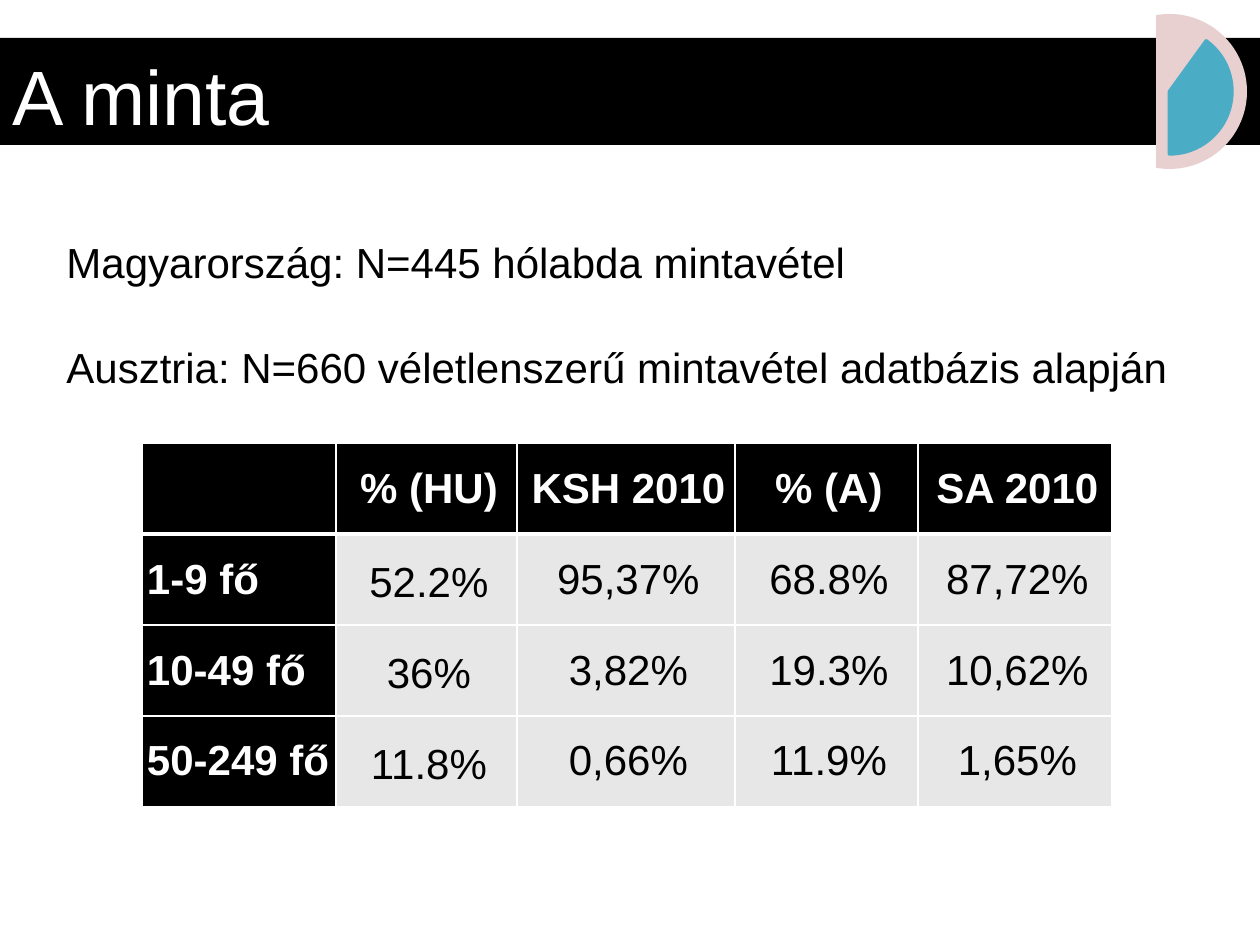
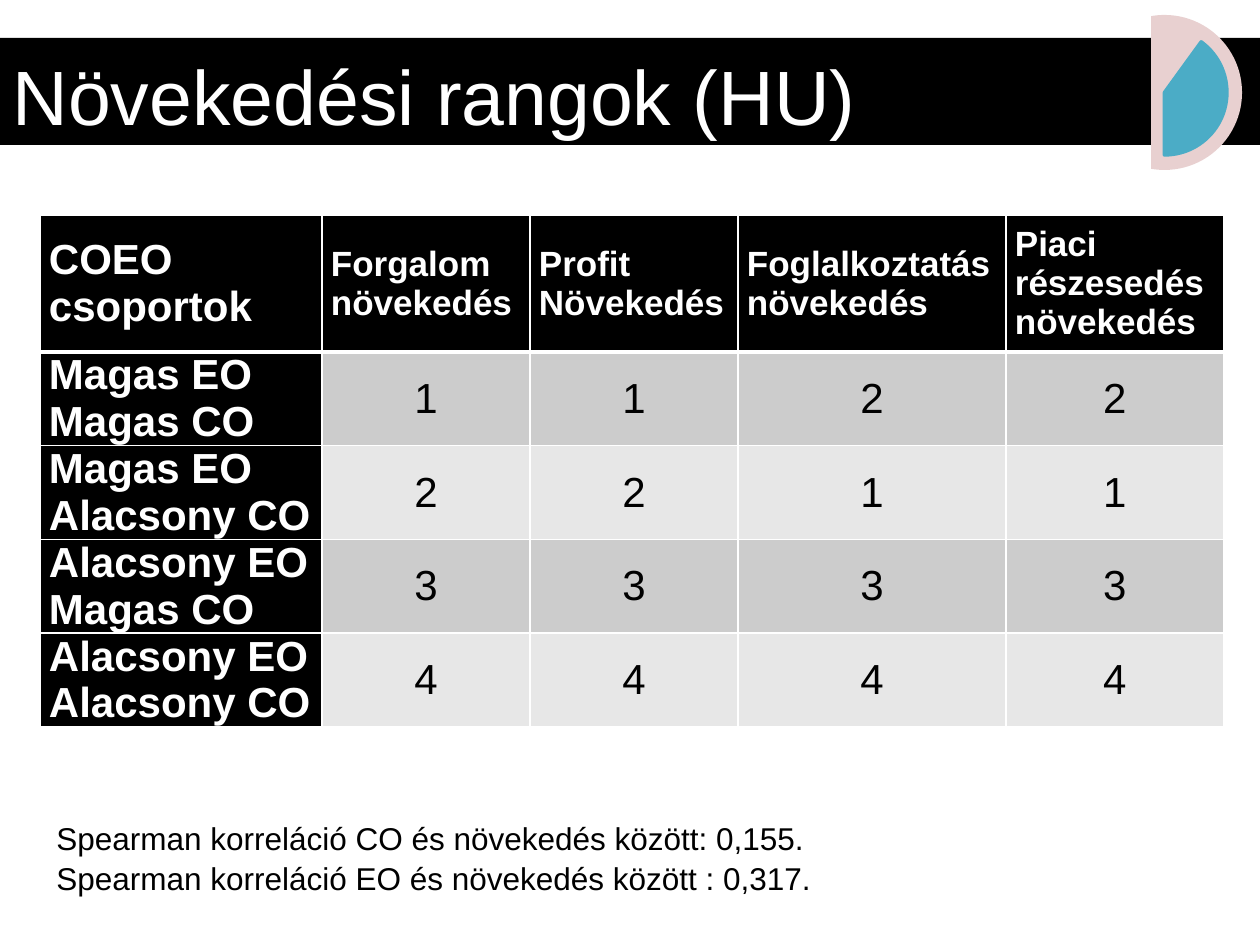
from lxml import etree
from pptx import Presentation
from pptx.dml.color import RGBColor
from pptx.enum.shapes import MSO_SHAPE
from pptx.enum.text import MSO_ANCHOR, PP_ALIGN
from pptx.oxml.ns import qn
from pptx.util import Emu, Pt

CHORD, PIE = MSO_SHAPE.CHORD, MSO_SHAPE.PIE
LEFT, CENTER = PP_ALIGN.LEFT, PP_ALIGN.CENTER
TOP, MIDDLE = MSO_ANCHOR.TOP, MSO_ANCHOR.MIDDLE

FONT = "Arial"
COLORS = {
    "black": "000000",
    "white": "FFFFFF",
    "light_row": "E7E7E7",
    "dark_row": "CCCCCC",
    "pink": "E8D0D0",
    "teal": "4BACC6",
}
SLIDE_WIDTH, SLIDE_HEIGHT = 1260, 945
EMU_PER_PX = 914400 / 126
TITLE_ONLY = 5
BODY_SPACING = 1.075
ANGLE_UNIT = 0.6  # one degree as an adjustment value


def px(length):
    return Emu(round(length * EMU_PER_PX))


def box(left, top, width, height):
    return [px(length) for length in (left, top, width, height)]


def color(name):
    return RGBColor.from_string(COLORS[name])


def fill(target, name):
    target.fill.solid()
    target.fill.fore_color.rgb = color(name)


def add_run(paragraph, text, size, color_name="black", bold=False):
    run = paragraph.add_run()
    run.text = text
    run.font.name = FONT
    run.font.size = Pt(size)
    run.font.bold = bold
    run.font.color.rgb = color(color_name)


def add_title_slide(presentation, title):
    """Add a slide whose title placeholder is the black band."""
    slide = presentation.slides.add_slide(presentation.slide_layouts[TITLE_ONLY])
    band = slide.shapes.title
    band.left, band.top, band.width, band.height = box(0, 38, SLIDE_WIDTH, 107)
    fill(band, "black")
    band.text_frame.vertical_anchor = MIDDLE
    paragraph = band.text_frame.paragraphs[0]
    paragraph.alignment = LEFT
    paragraph.line_spacing = BODY_SPACING
    add_run(paragraph, title, 44, "white")
    return slide


def add_sector(slide, kind, bounds, angles, color_name):
    shape = slide.shapes.add_shape(kind, *box(*bounds))
    shape.shadow.inherit = False
    for index, angle in enumerate(angles):
        shape.adjustments[index] = angle * ANGLE_UNIT
    fill(shape, color_name)
    return shape


def add_emblem(slide, left, top):
    """Draw the pink half disc with the teal sector inside it."""
    disc, inset = 155, 15
    inner = disc - 2 * inset
    half_disc = add_sector(slide, CHORD, (left, top, disc, disc), (260, 100), "pink")
    half_disc.line.fill.background()
    sector = add_sector(slide, PIE, (left + inset, top + inset, inner, inner),
                        (306, 90), "teal")
    sector.line.color.rgb = color("teal")
    sector.line.width = Pt(2)


def add_lines(slide, bounds, lines, size, gap=0):
    frame = slide.shapes.add_textbox(*box(*bounds)).text_frame
    frame.word_wrap = True
    for index, line in enumerate(lines):
        paragraph = frame.add_paragraph() if index else frame.paragraphs[0]
        paragraph.line_spacing = BODY_SPACING
        if index:
            paragraph.space_before = Pt(gap)
        add_run(paragraph, line, size)


def set_borders(cell, bottom_width):
    properties = cell._tc.get_or_add_tcPr()
    widths = {"a:lnL": 1, "a:lnR": 1, "a:lnT": 1, "a:lnB": bottom_width}
    for index, (tag, width) in enumerate(widths.items()):
        line = etree.Element(qn(tag), w=str(Pt(width)))
        solid = etree.SubElement(line, qn("a:solidFill"))
        etree.SubElement(solid, qn("a:srgbClr"), val=COLORS["white"])
        properties.insert(index, line)


def add_cell_text(cell, text, alignment, size, color_name, bold):
    paragraph = cell.text_frame.paragraphs[0]
    paragraph.alignment = alignment
    for index, line in enumerate(text.split("\n")):
        if index:
            paragraph.add_line_break()
        if line:
            add_run(paragraph, line, size, color_name, bold)


def add_table(slide, origin, column_widths, row_heights, rows, row_colors, margins,
              header_alignment=CENTER, header_size=24, label_anchor=MIDDLE):
    """Add a table with a black header row and a black label column."""
    bounds = (*origin, sum(column_widths), sum(row_heights))
    table = slide.shapes.add_table(len(rows), len(column_widths), *box(*bounds)).table
    for column, width in zip(table.columns, column_widths):
        column.width = px(width)
    for row, height in zip(table.rows, row_heights):
        row.height = px(height)
    for row_index, texts in enumerate(rows):
        for column_index, text in enumerate(texts):
            cell = table.cell(row_index, column_index)
            is_header, is_label = row_index == 0, column_index == 0
            is_black = is_header or is_label
            cell.margin_left, cell.margin_right = map(px, margins)
            cell.margin_top = cell.margin_bottom = 0
            cell.vertical_anchor = label_anchor if is_label and not is_header else MIDDLE
            row_color = row_colors[(row_index - 1) % len(row_colors)]
            fill(cell, "black" if is_black else row_color)
            set_borders(cell, 3 if is_header else 1)
            if is_header:
                alignment = header_alignment
            else:
                alignment = LEFT if is_label else CENTER
            size = header_size if is_header and not is_label else 24
            add_cell_text(cell, text, alignment, size,
                          "white" if is_black else "black", is_black)
    return table


def add_sample_slide(presentation):
    slide = add_title_slide(presentation, "A minta")
    rows = [
        ("", "% (HU)", "KSH 2010", "% (A)", "SA 2010"),
        ("1-9 fő", "52.2%", "95,37%", "68.8%", "87,72%"),
        ("10-49 fő", "36%", "3,82%", "19.3%", "10,62%"),
        ("50-249 fő", "11.8%", "0,66%", "11.9%", "1,65%"),
    ]
    table = add_table(slide, (142, 443), (194, 181, 218, 183, 194), [91] * 4,
                      rows, ["light_row"], (5, 0))
    for row_index in range(1, len(rows)):
        table.cell(row_index, 1).text_frame.paragraphs[0].line_spacing = 1.15
    add_emblem(slide, 1092, 14)
    add_lines(slide, (54, 227, 1142, 165), [
        "Magyarország: N=445 hólabda mintavétel",
        "Ausztria: N=660 véletlenszerű mintavétel adatbázis alapján",
    ], 24, gap=28.8)


def add_ranking_slide(presentation):
    slide = add_title_slide(presentation, "Növekedési rangok (HU)")
    rows = [
        ("COEO csoportok", "Forgalom növekedés", "Profit Növekedés",
         "Foglalkoztatás növekedés", "Piaci részesedés növekedés"),
        ("Magas EO\nMagas CO", "1", "1", "2", "2"),
        ("Magas EO Alacsony CO", "2", "2", "1", "1"),
        ("Alacsony EO Magas CO", "3", "3", "3", "3"),
        ("Alacsony EO Alacsony CO", "4", "4", "4", "4"),
    ]
    add_table(slide, (40, 215), (282, 208, 208, 268, 218), [137] + [93] * 4,
              rows, ["dark_row", "light_row"], (9, 9),
              header_alignment=LEFT, header_size=20, label_anchor=TOP)
    add_lines(slide, (44, 810, 1181, 89), [
        "Spearman korreláció CO és növekedés között: 0,155.",
        "Spearman korreláció EO és növekedés között : 0,317.",
    ], 18)
    add_emblem(slide, 1087, 15)


def main():
    presentation = Presentation()
    presentation.slide_width = px(SLIDE_WIDTH)
    presentation.slide_height = px(SLIDE_HEIGHT)
    add_sample_slide(presentation)
    add_ranking_slide(presentation)
    presentation.save("out.pptx")


if __name__ == "__main__":
    main()
